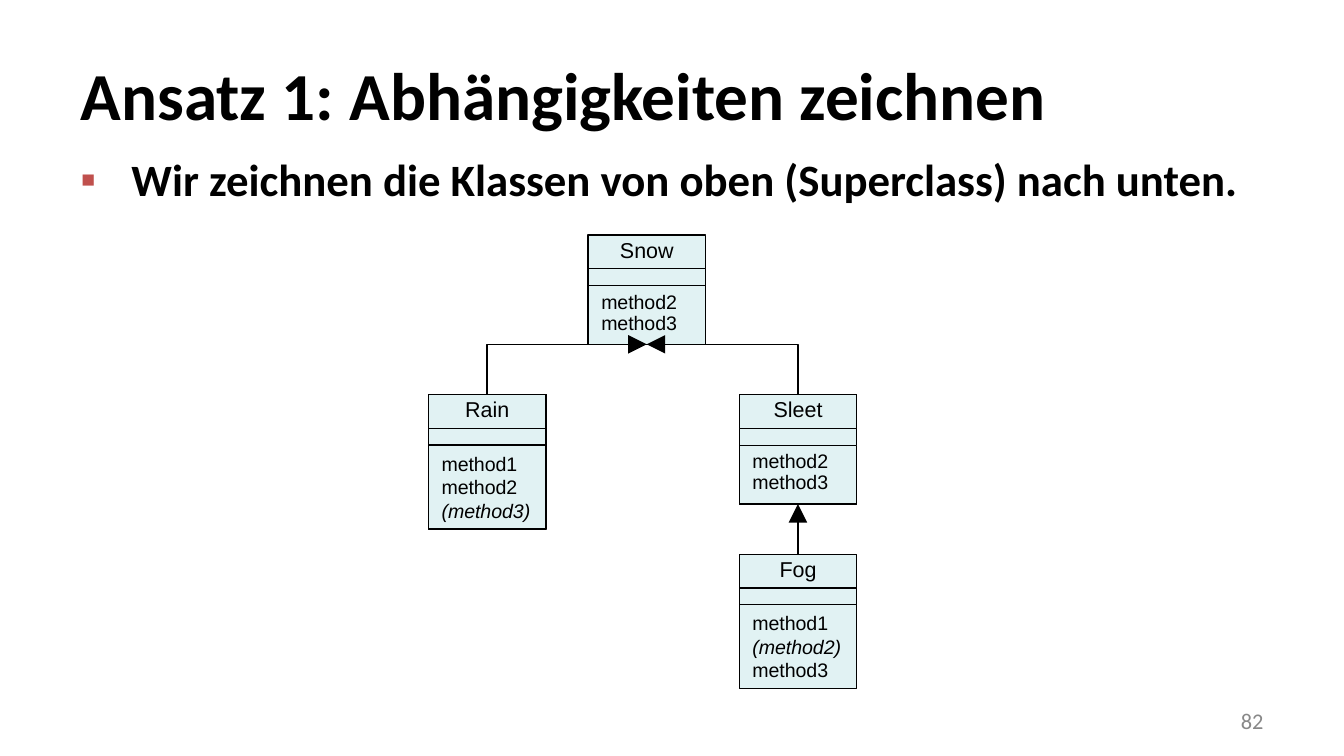
from pptx import Presentation
from pptx.dml.color import RGBColor
from pptx.enum.shapes import MSO_CONNECTOR as CONN, MSO_SHAPE as SHAPE
from pptx.enum.text import MSO_ANCHOR as ANCHOR, PP_ALIGN as ALIGN
from pptx.oxml.ns import qn
from pptx.util import Inches, Pt
from lxml.etree import SubElement

# Content
TITLE = "Ansatz 1: Abhängigkeiten zeichnen"
BULLET = "Wir zeichnen die Klassen von oben (Superclass) nach unten."
PAGE = "82"
# name: (left, top, methods) in grid units; inherited methods in parentheses
CLASSES = {
    "Snow": (70, 28, ["method2", "method3"]),
    "Rain": (51, 47, ["method1", "method2", "(method3)"]),
    "Fog": (88, 66, ["method1", "(method2)", "method3"]),
    "Sleet": (88, 47, ["method2", "method3"]),
}
INHERITS = [("Sleet", "Snow"), ("Rain", "Snow"), ("Fog", "Sleet")]

# Theme
THEME = {
    "heading": "Calibri", "diagram": "Arial",
    "ink": "000000", "fill": "E1F2F3", "accent": "C0504D", "muted": "888888",
    "title": 36, "body": 24, "name": 11.5, "method": 10.5, "page": 12,
}
LINE = Pt(0.75)

# Diagram grid: sixteenths of an inch
BOX_W, NAME_H, METHODS_TOP = 14, 4, 6


def grid(units):
    return Inches(units / 16)


def rgb(key):
    return RGBColor.from_string(THEME[key])


def write(p, text, size, font="heading", color="ink", bold=False, italic=False):
    r = p.add_run()
    r.text = text
    f = r.font
    f.name, f.size = THEME[font], Pt(THEME[size])
    f.bold, f.italic = bold, italic
    f.color.rgb = rgb(color)


def add_text(slide, box, anchor=ANCHOR.TOP):
    tf = slide.shapes.add_textbox(*map(Inches, box)).text_frame
    tf.word_wrap, tf.vertical_anchor = True, anchor
    return tf.paragraphs[0]


def add_bullet(p):
    pPr = p._p.get_or_add_pPr()
    indent = Inches(0.38)
    pPr.set("marL", str(indent))
    pPr.set("indent", str(-indent))
    color = SubElement(pPr, qn("a:buClr"))
    SubElement(color, qn("a:srgbClr")).set("val", THEME["accent"])
    SubElement(pPr, qn("a:buFont")).set("typeface", THEME["diagram"])
    SubElement(pPr, qn("a:buChar")).set("char", "▪")


def methods_height(methods):
    return 7 if len(methods) == 2 else 10


def add_box(group, left, top, height):
    sp = group.shapes.add_shape(
        SHAPE.RECTANGLE, *map(grid, (left, top, BOX_W, height)))
    sp.shadow.inherit = False
    sp.fill.solid()
    sp.fill.fore_color.rgb = rgb("fill")
    sp.line.color.rgb = rgb("ink")
    sp.line.width = LINE
    tf = sp.text_frame
    tf.word_wrap, tf.vertical_anchor = True, ANCHOR.TOP
    return tf


def add_class(slide, name, left, top, methods):
    group = slide.shapes.add_group_shape()
    height = methods_height(methods)
    add_box(group, left, top, METHODS_TOP + height)

    p = add_box(group, left, top, NAME_H).paragraphs[0]
    p.alignment, p.line_spacing = ALIGN.CENTER, 0.8
    write(p, name, "name", "diagram")

    tf = add_box(group, left, top + METHODS_TOP, height)
    for i, method in enumerate(methods):
        p = tf.add_paragraph() if i else tf.paragraphs[0]
        p.alignment = ALIGN.LEFT
        p.line_spacing = 0.9 if len(methods) == 2 else 1.0
        write(p, method, "method", "diagram", italic=method.startswith("("))


def add_inheritance(slide, child, parent):
    child_x, child_y, _ = CLASSES[child]
    parent_x, parent_y, methods = CLASSES[parent]
    bottom = parent_y + METHODS_TOP + methods_height(methods)
    kind = CONN.STRAIGHT if child_x == parent_x else CONN.ELBOW
    ends = (child_x + BOX_W / 2, child_y, parent_x + BOX_W / 2, bottom)
    cx = slide.shapes.add_connector(kind, *map(grid, ends))
    cx.line.color.rgb = rgb("ink")
    cx.line.width = LINE
    spPr = cx._element.spPr
    if kind == CONN.ELBOW:  # go up first, then across
        guide = SubElement(spPr.prstGeom.get_or_add_avLst(), qn("a:gd"))
        guide.set("name", "adj1")
        guide.set("fmla", "val 0")
    tail = SubElement(cx.line._get_or_add_ln(), qn("a:tailEnd"))
    for key, value in (("type", "triangle"), ("w", "lg"), ("len", "lg")):
        tail.set(key, value)
    SubElement(spPr, qn("a:effectLst"))


def main():
    prs = Presentation()
    prs.slide_width = Inches(10)
    prs.slide_height = Inches(10 * 9 / 16)
    slide = prs.slides.add_slide(prs.slide_layouts[5])

    # Title
    title = slide.shapes.title
    title.left, title.top, title.width, title.height = map(
        Inches, (0.5, 0.23, 9, 0.94))
    title.text_frame.vertical_anchor = ANCHOR.MIDDLE
    p = title.text_frame.paragraphs[0]
    p.alignment = ALIGN.LEFT
    write(p, TITLE, "title", bold=True)

    # Bullet
    p = add_text(slide, (0.5, 1.08, 9, 3.94))
    add_bullet(p)
    write(p, BULLET, "body", bold=True)

    # Class diagram
    for name, (left, top, methods) in CLASSES.items():
        add_class(slide, name, left, top, methods)
    for child, parent in INHERITS:
        add_inheritance(slide, child, parent)

    # Page number
    p = add_text(slide, (7.17, 5.21, 2.33, 0.3), ANCHOR.MIDDLE)
    p.alignment = ALIGN.RIGHT
    write(p, PAGE, "page", color="muted")

    prs.save("out.pptx")


if __name__ == "__main__":
    main()
